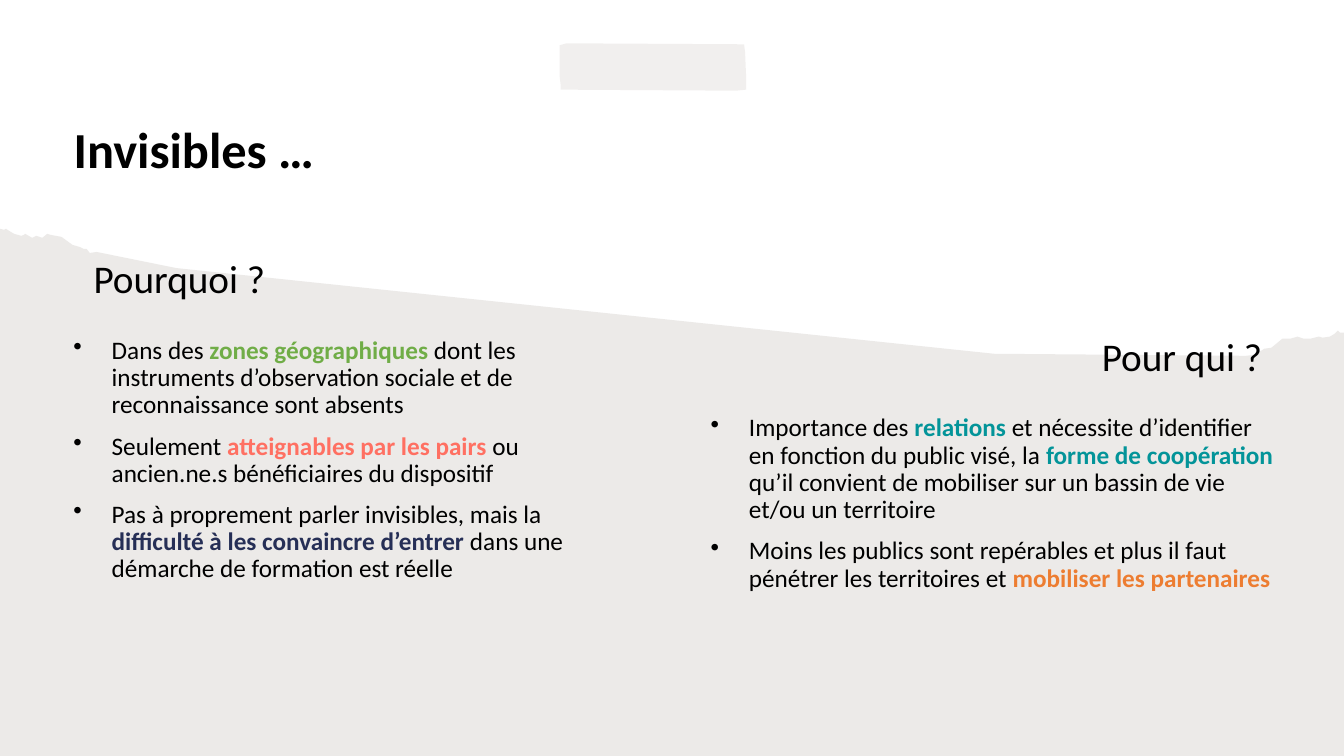
import pptx
import pptx.dml.color
import pptx.enum.text
import pptx.oxml
import pptx.oxml.ns
import pptx.util
from lxml import etree

Inches = pptx.util.Inches
Pt = pptx.util.Pt
BLACK = "000000"
GREEN, CORAL, NAVY, TEAL, ORANGE = "70AD47", "FF7062", "262F56", "039499", "ED7D31"

GROUND = [
    (6, 0), (9, 2), (14, 5), (21, 7), (24, 6), (25, 5), (32, 9), (36, 7),
    (42, 9), (47, 5), (50, 6), (61, 8), (72, 16), (79, 18), (83, 20),
    (86, 20), (89, 24), (96, 23), (175, 39), (986, 124), (1232, 126),
    (1236, 126), (1245, 125), (1247, 122), (1251, 121), (1254, 119),
    (1261, 118), (1272, 109), (1280, 109), (1287, 107), (1293, 109),
    (1300, 109), (1308, 107), (1312, 108), (1319, 107), (1324, 104),
    (1327, 101), (1329, 103), (1333, 103), (1333, 523), (0, 523), (0, 0), (4, 1),
]
TAPE = [
    (1, 2), (8, 0), (184, 1), (185, 9), (186, 33), (186, 46), (176, 47),
    (2, 46), (2, 41), (1, 32), (1, 19),
]
WHY = [
    [("Dans des ", None), ("zones géographiques ", GREEN),
     ("dont les instruments d’observation sociale et de reconnaissance sont absents", None)],
    [("Seulement ", None), ("atteignables par les pairs ", CORAL),
     ("ou ancien.ne.s bénéficiaires du dispositif", None)],
    [("Pas à proprement parler invisibles, mais la ", None),
     ("difficulté à les convaincre d’entrer", NAVY),
     (" dans une démarche de formation est réelle", None)],
]
WHO = [
    [("Importance des ", None), ("relations", TEAL),
     (" et nécessite d’identifier en fonction du public visé, la ", None),
     ("forme de coopération ", TEAL),
     ("qu’il convient de mobiliser sur un bassin de vie et/ou un territoire", None)],
    [("Moins les publics sont repérables et plus il faut pénétrer les territoires et ", None),
     ("mobiliser les partenaires", ORANGE)],
]


def color(code):
    return pptx.dml.color.RGBColor.from_string(code)


def style(para, size):
    para.font.name = "Calibri"
    para.font.size = Pt(size)
    para.font.color.rgb = color(BLACK)
    para.line_spacing = 0.9


def paper(slide, left, top, points, code, alpha):
    pen = slide.shapes.build_freeform(*points[0], scale=Inches(0.01))
    pen.add_line_segments(points[1:], close=True)
    shape = pen.convert_to_shape(Inches(left), Inches(top))
    shape.shadow.inherit = False
    shape.line.fill.background()
    shape.fill.solid()
    shape.fill.fore_color.rgb = color(code)
    tint = shape.fill._xPr.find(".//" + pptx.oxml.ns.qn("a:srgbClr"))
    etree.SubElement(tint, pptx.oxml.ns.qn("a:alpha"), val=str(alpha * 1000))


def title(slide, box, text):
    shape = slide.shapes.title
    shape.left, shape.top, shape.width, shape.height = map(Inches, box)
    frame = shape.text_frame
    frame.text = text
    frame.auto_size = pptx.enum.text.MSO_AUTO_SIZE.NONE
    frame.vertical_anchor = pptx.enum.text.MSO_ANCHOR.BOTTOM
    para = frame.paragraphs[0]
    para.alignment = pptx.enum.text.PP_ALIGN.LEFT
    style(para, 36)
    para.font.bold = True


def write(slide, box, items, size, bullet=False):
    frame = slide.shapes.add_textbox(*map(Inches, box)).text_frame
    frame.word_wrap = True
    for index, item in enumerate(items):
        para = frame.add_paragraph() if index else frame.paragraphs[0]
        style(para, size)
        para.space_before = Pt(10)
        for text, accent in item:
            run = para.add_run()
            run.text = text
            if accent:
                run.font.bold = True
                run.font.color.rgb = color(accent)
        if bullet:
            props = para._p.get_or_add_pPr()
            props.set("marL", str(Inches(0.38)))
            props.set("indent", str(Inches(-0.38)))
            mark = pptx.oxml.parse_xml(
                f'<a:buChar {pptx.oxml.ns.nsdecls("a")} char="•"/>')
            props.find(pptx.oxml.ns.qn("a:defRPr")).addprevious(mark)


def column(slide, box, shift, head, items):
    left, top, width, height = box
    gap = 0.77
    write(slide, (left + shift, top, width - shift, 0.9), [[(head, None)]], 28)
    write(slide, (left, top + gap, width, height - gap), items, 18, bullet=True)


def main():
    deck = pptx.Presentation()
    deck.slide_width = Inches(13.33)
    deck.slide_height = Inches(7.5)
    slide = deck.slides.add_slide(deck.slide_layouts[5])
    paper(slide, 0, 2.27, GROUND, "82766A", 15)
    paper(slide, 5.54, 0.43, TAPE, "D9D4D0", 35)
    title(slide, (0.63, 0.26, 12.05, 1.57), "Invisibles …")
    column(slide, (0.63, 2.53, 5.67, 4.77), 0.2, "Pourquoi ?", WHY)
    column(slide, (6.95, 3.3, 5.78, 4), 3.88, "Pour qui ?", WHO)
    deck.save("out.pptx")


if __name__ == "__main__":
    main()
